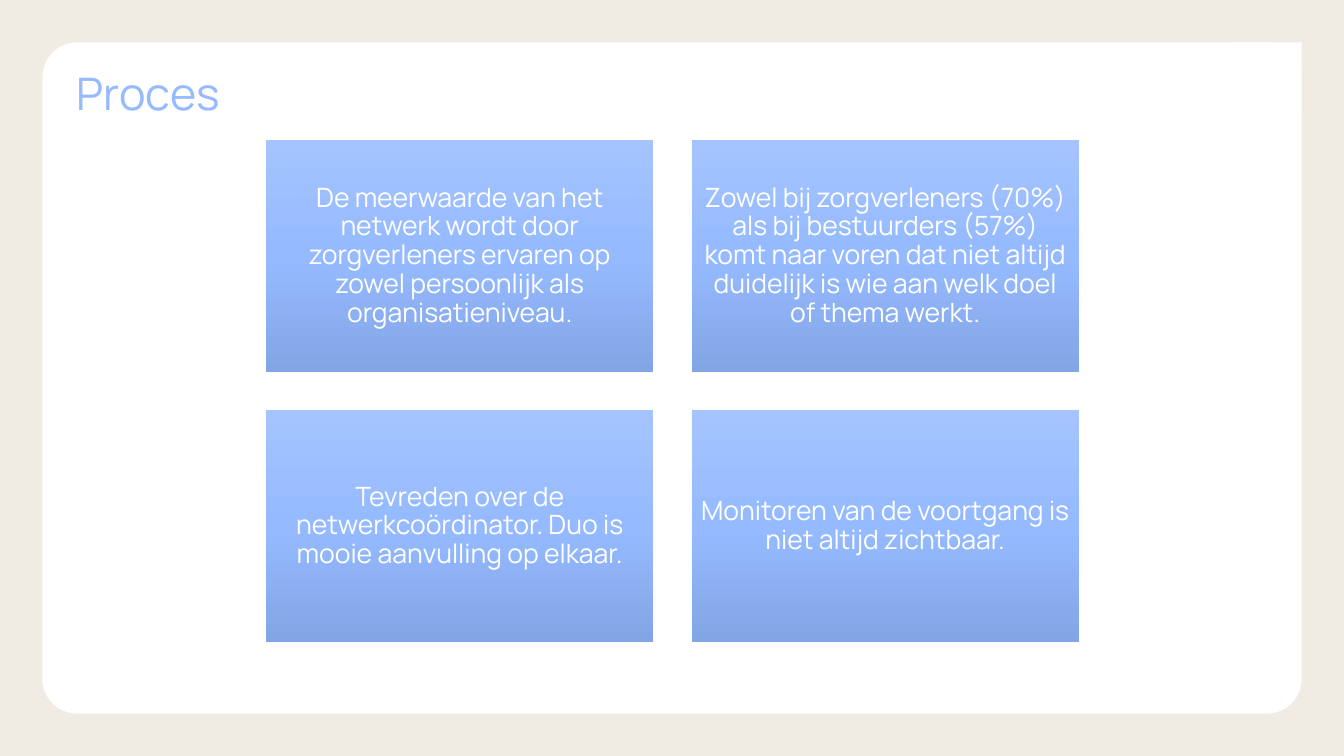
from copy import deepcopy
from dataclasses import dataclass

from pptx import Presentation
from pptx import util as u
from pptx.dml.color import RGBColor
from pptx.enum import shapes, text
from pptx.oxml.ns import qn
from pptx.shapes.autoshape import Shape
from pptx.slide import Slide

SAND = RGBColor(0xF1, 0xEC, 0xE3)
WHITE = RGBColor(0xFF, 0xFF, 0xFF)
BLUE = RGBColor(0x95, 0xBA, 0xFF)
CARD_STOPS = (
    (0, RGBColor(0xA5, 0xC4, 0xFF)),
    (0.5, BLUE),
    (1, RGBColor(0x82, 0xA5, 0xE5)),
)
FONT = "Manrope"

PAGE_WIDTH, PAGE_HEIGHT = 13.33, 7.5
MARGIN = 0.42
PANEL_CORNER = 0.69
GRID_LEFT, GRID_TOP = 2.64, 1.39
CARD_WIDTH, CARD_HEIGHT = 3.84, 2.3
GAP = 0.38


@dataclass(frozen=True)
class Card:
    column: int
    row: int
    message: str


CARDS = (
    Card(0, 0, "De meerwaarde van het netwerk wordt door zorgverleners ervaren "
               "op zowel persoonlijk als organisatieniveau."),
    Card(1, 0, "Zowel bij zorgverleners (70%) als bij bestuurders (57%) komt naar "
               "voren dat niet altijd duidelijk is wie aan welk doel of thema werkt."),
    Card(0, 1, "Tevreden over de netwerkcoördinator. Duo is mooie aanvulling op elkaar."),
    Card(1, 1, "Monitoren van de voortgang is niet altijd zichtbaar."),
)


def add_block(page: Slide, kind: shapes.MSO_SHAPE, left: float, top: float,
              width: float, height: float) -> Shape:
    """Add a white preset shape without outline or shadow; lengths in inches."""
    block = page.shapes.add_shape(
        kind, u.Inches(left), u.Inches(top), u.Inches(width), u.Inches(height))
    block.shadow.inherit = False
    block.line.fill.background()
    block.fill.solid()
    block.fill.fore_color.rgb = WHITE
    return block


def write(box: Shape, message: str, size: float, colour: RGBColor, inset: float,
          alignment: text.PP_ALIGN, anchor: text.MSO_ANCHOR) -> None:
    frame = box.text_frame
    frame.text = message
    frame.word_wrap = True
    frame.vertical_anchor = anchor
    frame.margin_left = frame.margin_right = u.Inches(inset)
    frame.margin_top = frame.margin_bottom = u.Inches(inset)
    para = frame.paragraphs[0]
    para.alignment = alignment
    para.line_spacing = 0.9
    font = para.runs[0].font
    font.name = FONT
    font.size = u.Pt(size)
    font.color.rgb = colour


def shade(block: Shape) -> None:
    """Fill from top to bottom with the three card colours."""
    block.fill.gradient()
    block.fill.gradient_angle = 270
    stop_list = next(block.fill._xPr.iter(qn("a:gsLst")))
    stop_list.append(deepcopy(stop_list[-1]))
    for stop, (position, colour) in zip(block.fill.gradient_stops, CARD_STOPS):
        stop.position = position
        stop.color.rgb = colour


def add_panel(page: Slide) -> None:
    """Add the white panel, rounded everywhere but at the top right."""
    width, height = PAGE_WIDTH - 2 * MARGIN, PAGE_HEIGHT - 2 * MARGIN
    panel = add_block(page, shapes.MSO_SHAPE.ROUNDED_RECTANGLE,
                      MARGIN, MARGIN, width, height)
    panel.adjustments[0] = 0.052
    add_block(page, shapes.MSO_SHAPE.RECTANGLE, MARGIN + width - PANEL_CORNER,
              MARGIN, PANEL_CORNER, PANEL_CORNER)


def add_title(page: Slide) -> None:
    title = page.shapes.add_textbox(
        u.Inches(0.76), u.Inches(0.71), u.Inches(11.81), u.Inches(0.49))
    write(title, "Proces", 32, BLUE, 0, text.PP_ALIGN.LEFT, text.MSO_ANCHOR.TOP)


def add_card(page: Slide, card: Card) -> None:
    block = add_block(page, shapes.MSO_SHAPE.RECTANGLE,
                      GRID_LEFT + card.column * (CARD_WIDTH + GAP),
                      GRID_TOP + card.row * (CARD_HEIGHT + GAP),
                      CARD_WIDTH, CARD_HEIGHT)
    shade(block)
    write(block, card.message, 19, WHITE, 0.08,
          text.PP_ALIGN.CENTER, text.MSO_ANCHOR.MIDDLE)


def main() -> None:
    deck = Presentation()
    deck.slide_width = u.Inches(PAGE_WIDTH)
    deck.slide_height = u.Inches(PAGE_HEIGHT)
    page = deck.slides.add_slide(deck.slide_layouts[6])
    page.background.fill.solid()
    page.background.fill.fore_color.rgb = SAND
    add_panel(page)
    add_title(page)
    for card in CARDS:
        add_card(page, card)
    deck.save("out.pptx")


if __name__ == "__main__":
    main()
